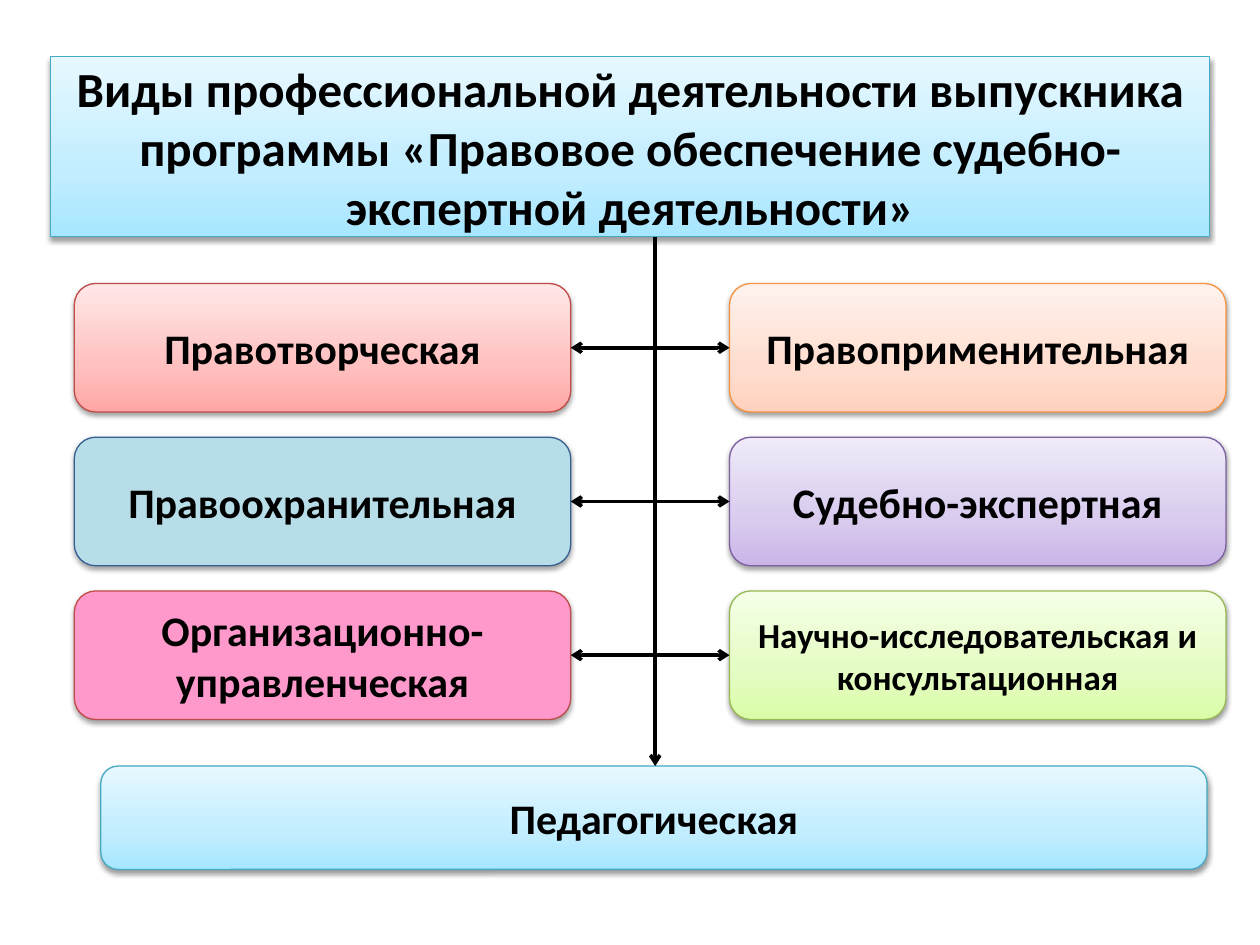
from copy import deepcopy
from dataclasses import dataclass

from lxml.etree import SubElement
from pptx import Presentation
from pptx.dml.color import RGBColor
from pptx.enum.shapes import MSO_CONNECTOR, MSO_SHAPE
from pptx.enum.text import MSO_ANCHOR, MSO_AUTO_SIZE, PP_ALIGN
from pptx.oxml.ns import qn
from pptx.util import Inches, Pt

FONT = "Calibri"
BLACK = "000000"
BLUE = ("A7E6FF", "C1EDFF", "E7F8FF")
STOPS = (0, 0.35, 1)

LEFT_COLUMN, RIGHT_COLUMN = 0.59, 5.79
BOX_WIDTH, BOX_HEIGHT = 3.94, 1.02
FIRST_ROW, ROW_STEP = 2.25, 1.22
TRUNK_X = 5.2


@dataclass
class Activity:
    text: str
    colors: tuple[str, ...]  # one colour is solid, three run from bottom to top
    line: str
    size: int = 24


ROWS = (
    (Activity("Правотворческая", ("FFA6A5", "FFC0BF", "FFE7E7"), "BF4C48"),
     Activity("Правоприменительная", ("FFD2BD", "FFDED0", "FFF2ED"), "F69240")),
    (Activity("Правоохранительная", ("B7DEE8",), "376092"),
     Activity("Судебно-экспертная", ("C9B5E8", "D8CBEE", "F0EAF9"), "7D60A0")),
    (Activity("Организационно-управленческая", ("FF99CC",), "BF4C48"),
     Activity("Научно-исследовательская и консультационная",
              ("DAFDA7", "E4FCC2", "F5FFE7"), "98B955", size=20)),
)
TITLE = Activity(
    "Виды профессиональной деятельности выпускника\n"
    "программы «Правовое обеспечение судебно-экспертной деятельности»",
    BLUE, "46AAC5", size=28)
TEACHING = Activity("Педагогическая", BLUE, "46AAC5")


def color(value: str) -> RGBColor:
    return RGBColor.from_string(value)


def write_text(shape, text: str, *, size: int, bold: bool = True,
               text_color: str = BLACK) -> None:
    frame = shape.text_frame
    frame.text = text
    frame.word_wrap = True
    frame.auto_size = MSO_AUTO_SIZE.NONE
    frame.vertical_anchor = MSO_ANCHOR.MIDDLE
    for paragraph in frame.paragraphs:
        paragraph.alignment = PP_ALIGN.CENTER
        for run in paragraph.runs:
            run.font.name = FONT
            run.font.size = Pt(size)
            run.font.bold = bold
            run.font.color.rgb = color(text_color)


def fill_shape(shape, colors: tuple[str, ...]) -> None:
    if len(colors) == 1:
        shape.fill.solid()
        shape.fill.fore_color.rgb = color(colors[0])
        return
    shape.fill.gradient()
    shape.fill.gradient_angle = 90
    stop_list = shape._element.spPr.find(".//" + qn("a:gsLst"))
    stop_list.append(deepcopy(stop_list[-1]))
    for stop, position, value in zip(shape.fill.gradient_stops, STOPS, colors):
        stop.position = position
        stop.color.rgb = color(value)


def add_shadow(shape) -> None:
    shape.shadow.inherit = False
    effects = shape._element.spPr.find(qn("a:effectLst"))
    shadow = SubElement(effects, qn("a:outerShdw"), blurRad=str(Pt(3.1)),
                        dist=str(Pt(1.6)), dir="5400000", rotWithShape="0")
    shade = SubElement(shadow, qn("a:srgbClr"), val=BLACK)
    SubElement(shade, qn("a:alpha"), val="38000")


def style_box(shape, activity: Activity) -> None:
    fill_shape(shape, activity.colors)
    shape.line.color.rgb = color(activity.line)
    shape.line.width = Pt(0.75)
    add_shadow(shape)
    write_text(shape, activity.text, size=activity.size)


def add_box(slide, activity: Activity, left: float, top: float,
            width: float = BOX_WIDTH, height: float = BOX_HEIGHT) -> None:
    shape = slide.shapes.add_shape(
        MSO_SHAPE.ROUNDED_RECTANGLE,
        Inches(left), Inches(top), Inches(width), Inches(height))
    style_box(shape, activity)


def place_title(slide) -> None:
    title = slide.shapes.title
    title.left, title.top = Inches(0.4), Inches(0.45)
    title.width, title.height = Inches(9.2), Inches(1.43)
    geometry = SubElement(title._element.spPr, qn("a:prstGeom"), prst="roundRect")
    SubElement(geometry, qn("a:avLst"))
    style_box(title, TITLE)


def add_arrow(slide, start: tuple[float, float], end: tuple[float, float],
              both_ends: bool = False) -> None:
    connector = slide.shapes.add_connector(
        MSO_CONNECTOR.STRAIGHT, *map(Inches, start + end))
    connector.line.color.rgb = color(BLACK)
    connector.line.width = Pt(2)
    line = connector.line._get_or_add_ln()
    for tag in ("a:headEnd", "a:tailEnd") if both_ends else ("a:tailEnd",):
        SubElement(line, qn(tag), type="arrow")
    SubElement(connector._element.spPr, qn("a:effectLst"))


def main() -> None:
    presentation = Presentation()
    presentation.slide_width, presentation.slide_height = Inches(10), Inches(7.5)
    slide = presentation.slides.add_slide(presentation.slide_layouts[5])

    # Heading and closing box
    place_title(slide)
    add_box(slide, TEACHING, 0.8, 6.08, 8.78, 0.82)

    # Trunk from the heading to the closing box
    add_arrow(slide, (TRUNK_X, 1.88), (TRUNK_X, 6.08))

    # Pairs of activities, joined across the trunk
    for index, (left, right) in enumerate(ROWS):
        top = FIRST_ROW + index * ROW_STEP
        middle = top + BOX_HEIGHT / 2
        add_box(slide, left, LEFT_COLUMN, top)
        add_box(slide, right, RIGHT_COLUMN, top)
        add_arrow(slide, (LEFT_COLUMN + BOX_WIDTH, middle),
                  (RIGHT_COLUMN, middle), both_ends=True)

    presentation.save("out.pptx")


if __name__ == "__main__":
    main()
